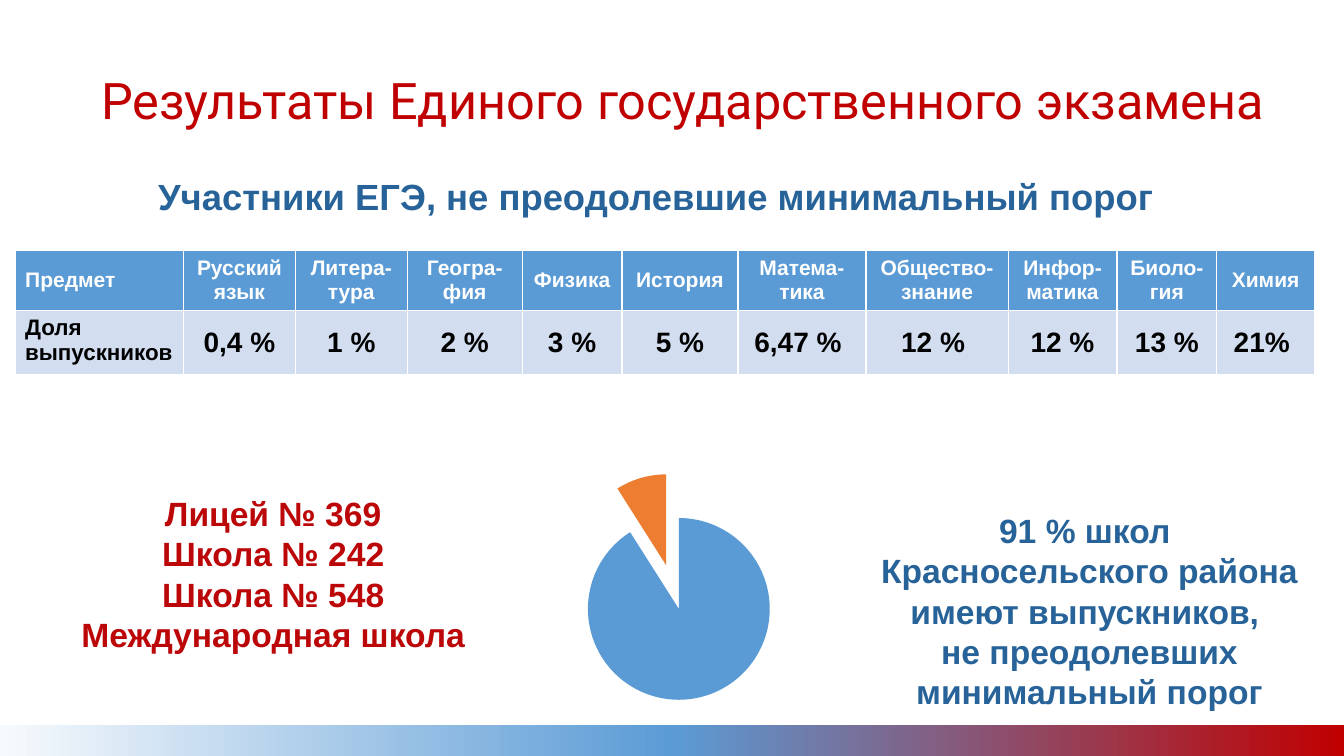
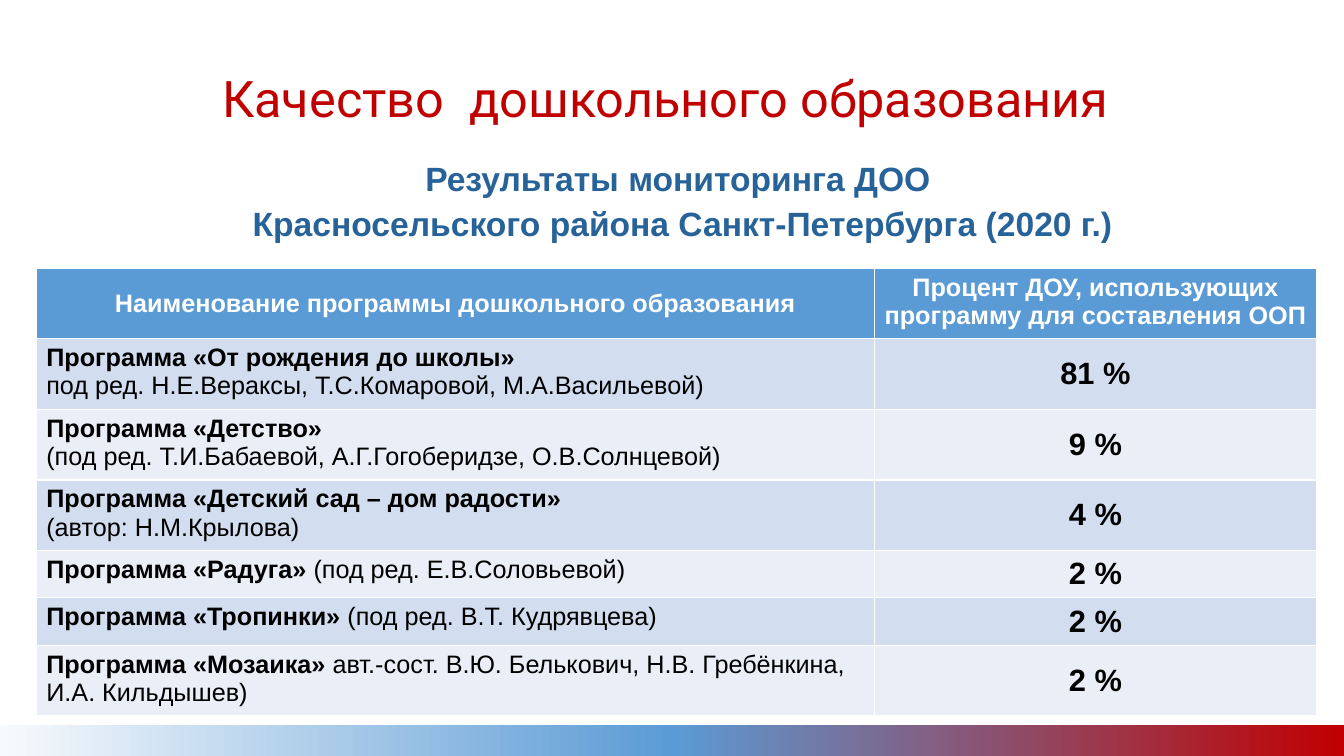
from copy import deepcopy
from dataclasses import dataclass, replace

from lxml import etree
from pptx import Presentation
from pptx.chart.data import CategoryChartData
from pptx.dml.color import RGBColor
from pptx.enum.chart import XL_CHART_TYPE as ChartType
from pptx.enum.shapes import MSO_SHAPE as Preset
from pptx.enum.text import MSO_ANCHOR as Anchor, MSO_AUTO_SIZE as AutoSize, PP_ALIGN as Align
from pptx.oxml.ns import qn
from pptx.util import Inches, Pt


@dataclass(frozen=True)
class TextStyle:
    size: int
    color: str
    font: str = "Arial"
    bold: bool = True


@dataclass(frozen=True)
class Theme:
    width: float = 13.33
    height: float = 7.5
    band_height: float = 0.31
    white: str = "FFFFFF"
    header: str = "5B9BD5"
    rows: tuple = ("D2DEEF", "EAEFF7")
    band: tuple = (("F7FAFD", 0), ("5B9BD5", 0.5), ("C00000", 1))
    slices: tuple = ("5B9BD5", "ED7D31")
    title: TextStyle = TextStyle(36, "C00000", "Roboto", False)
    subtitle: TextStyle = TextStyle(26, "276399")
    note: TextStyle = TextStyle(24, "276399")
    schools: TextStyle = TextStyle(24, "BC0709")
    head: TextStyle = TextStyle(18, "FFFFFF")
    small_head: TextStyle = TextStyle(15, "FFFFFF")
    cell: TextStyle = TextStyle(18, "000000")
    small_cell: TextStyle = TextStyle(16, "000000")
    share: TextStyle = TextStyle(20, "000000")
    percent: TextStyle = TextStyle(22, "000000")
    chart: TextStyle = TextStyle(10, "000000", "Calibri", False)


THEME = Theme()


def inches(box):
    return [Inches(value) for value in box]


def paint(fill, color):
    fill.solid()
    fill.fore_color.rgb = RGBColor.from_string(color)


def set_font(font, style):
    font.name = style.font
    font.size = Pt(style.size)
    font.bold = style.bold
    font.color.rgb = RGBColor.from_string(style.color)


def write(frame, lines, style, align=Align.CENTER, spacing=None):
    """Each line is a string, or a list of (text, bold) runs."""
    for index, line in enumerate(lines):
        paragraph = frame.add_paragraph() if index else frame.paragraphs[0]
        paragraph.alignment = align
        paragraph.line_spacing = spacing
        if isinstance(line, str):
            paragraph.text = line
            set_font(paragraph.font, style)
            continue
        set_font(paragraph.font, style)
        for text, bold in line:
            run = paragraph.add_run()
            run.text = text
            run.font.bold = bold


def add_block(shapes, box, lines, style, spacing=None):
    frame = shapes.add_textbox(*inches(box)).text_frame
    frame.word_wrap = True
    frame.auto_size = AutoSize.SHAPE_TO_FIT_TEXT
    write(frame, lines, style, spacing=spacing)


def add_rectangle(shapes, box):
    shape = shapes.add_shape(Preset.RECTANGLE, *inches(box))
    shape.shadow.inherit = False
    shape.line.fill.background()
    return shape


def add_title(shapes, box, text, spacing):
    shape = add_rectangle(shapes, box)
    paint(shape.fill, THEME.white)
    shape.text_frame.word_wrap = True
    shape.text_frame.vertical_anchor = Anchor.MIDDLE
    write(shape.text_frame, [text], THEME.title, spacing=spacing)


def add_band(shapes):
    top = THEME.height - THEME.band_height
    fill = add_rectangle(shapes, (0, top, THEME.width, THEME.band_height)).fill
    fill.gradient()
    fill.gradient_angle = 0
    # The default gradient has two stops, the band needs three
    stop_list = next(fill._xPr.iter(qn("a:gsLst")))
    stop_list.append(deepcopy(stop_list[-1]))
    for stop, (color, position) in zip(fill.gradient_stops, THEME.band):
        stop.color.rgb = RGBColor.from_string(color)
        stop.position = position


def start_slide(presentation, title, title_box, spacing):
    shapes = presentation.slides.add_slide(presentation.slide_layouts[6]).shapes
    add_title(shapes, title_box, title, spacing)
    add_band(shapes)
    return shapes


def add_grid(shapes, left, top, widths, heights):
    """Table with a header row and banded rows; the style draws white rules."""
    box = (left, top, sum(widths), sum(heights))
    table = shapes.add_table(len(heights), len(widths), *inches(box)).table
    for column, width in zip(table.columns, widths):
        column.width = Inches(width)
    for index, (row, height) in enumerate(zip(table.rows, heights)):
        row.height = Inches(height)
        for cell in row.cells:
            paint(cell.fill, THEME.rows[(index - 1) % 2] if index else THEME.header)
            cell.vertical_anchor = Anchor.MIDDLE
    return table


def add_subject_table(shapes, left, top):
    subjects = [
        ("Русский язык", "0,4 %", 1.11), ("Литера-тура", "1 %", 1.11),
        ("Геогра-фия", "2 %", 1.14), ("Физика", "3 %", 0.99),
        ("История", "5 %", 1.15), ("Матема-тика", "6,47 % ", 1.27),
        ("Общество-знание", "12 % ", 1.41), ("Инфор-матика", "12 %", 1.08),
        ("Биоло-гия", "13 %", 0.99), ("Химия", "21% ", 0.97),
    ]
    widths = [1.67] + [width for _, _, width in subjects]
    table = add_grid(shapes, left, top, widths, [0.6, 0.63])
    # Row labels
    write(table.cell(0, 0).text_frame, ["Предмет"], THEME.small_head, Align.LEFT)
    write(table.cell(1, 0).text_frame, ["Доля выпускников"], THEME.small_cell, Align.LEFT)
    table.cell(1, 0).vertical_anchor = Anchor.TOP
    # Subjects and shares
    for column, (subject, share, _) in enumerate(subjects, 1):
        write(table.cell(0, column).text_frame, [subject], THEME.small_head)
        write(table.cell(1, column).text_frame, [share], THEME.share)


def add_school_pie(shapes, box):
    data = CategoryChartData()
    data.categories = ["1", "2"]
    data.add_series("Series 1", (91, 9))
    chart = shapes.add_chart(ChartType.PIE, *inches(box), data).chart
    chart.has_title = False
    chart.has_legend = False
    set_font(chart.font, THEME.chart)
    series = chart.plots[0].series[0]
    for index, color in enumerate(THEME.slices):
        paint(series.points[index].format.fill, color)
    # Pull the slices apart
    explosion = etree.Element(qn("c:explosion"), val="25")
    series._element.find(qn("c:dPt")).addprevious(explosion)


def add_program_table(shapes, left, top):
    # Name, authors, share, authors on their own line
    programs = [
        ("Программа «От рождения до школы»",
         "под ред. Н.Е.Вераксы, Т.С.Комаровой, М.А.Васильевой)", "81 %", True),
        ("Программа «Детство»",
         "(под ред. Т.И.Бабаевой, А.Г.Гогоберидзе, О.В.Солнцевой)", "9 %", True),
        ("Программа «Детский сад – дом радости»", "(автор: Н.М.Крылова)", "4 %", True),
        ("Программа «Радуга» ", "(под ред. Е.В.Соловьевой)", "2 %", False),
        ("Программа «Тропинки» ", "(под ред. В.Т. Кудрявцева)", "2 %", False),
        ("Программа «Мозаика» ",
         "авт.-сост. В.Ю. Белькович, Н.В. Гребёнкина, И.А. Кильдышев)", "2 %", False),
    ]
    tall, low = 0.7, 0.47
    heights = [tall] * 4 + [low] * 2 + [tall]
    table = add_grid(shapes, left, top, [8.31, 4.39], heights)
    headings = ("Наименование программы дошкольного образования",
                "Процент ДОУ, использующих программу для составления ООП")
    for column, heading in enumerate(headings):
        write(table.cell(0, column).text_frame, [heading], THEME.head)
    table.cell(0, 1).vertical_anchor = Anchor.TOP
    for row, (name, authors, percent, own_line) in enumerate(programs, 1):
        runs = [(name, True), (authors, False)]
        lines = [[run] for run in runs] if own_line else [runs]
        cell = table.cell(row, 0)
        cell.vertical_anchor = Anchor.TOP
        write(cell.text_frame, lines, replace(THEME.cell, bold=False), Align.LEFT)
        write(table.cell(row, 1).text_frame, [percent], THEME.percent)


def build_exam_slide(presentation):
    shapes = start_slide(presentation, "Результаты Единого государственного экзамена",
                         (0.79, 0.25, 11.97, 1.36), 1.2)
    add_block(shapes, (0.27, 1.68, 12.48, 0.54),
              ["Участники ЕГЭ, не преодолевшие минимальный порог"], THEME.subtitle)
    add_subject_table(shapes, 0.15, 2.48)
    add_school_pie(shapes, (4.34, 4.56, 4.66, 2.53))
    add_block(shapes, (0.53, 4.84, 4.36, 1.72),
              ["Лицей № 369", "Школа № 242", "Школа № 548", "Международная школа"],
              THEME.schools)
    add_block(shapes, (8.33, 5.01, 4.95, 2.12),
              ["91 % школ ", "Красносельского района имеют выпускников, \v"
               "не преодолевших минимальный порог"], THEME.note)


def build_preschool_slide(presentation):
    shapes = start_slide(presentation, "Качество  дошкольного образования ",
                         (0.68, 0.39, 11.97, 1.09), 1.1)
    add_block(shapes, (0.42, 1.48, 12.7, 0.99),
              ["Результаты мониторинга ДОО \v"
               "Красносельского района Санкт-Петербурга (2020 г.)"], THEME.note, 1.1)
    add_program_table(shapes, 0.36, 2.66)


def main():
    presentation = Presentation()
    presentation.slide_width = Inches(THEME.width)
    presentation.slide_height = Inches(THEME.height)
    build_exam_slide(presentation)
    build_preschool_slide(presentation)
    presentation.save("out.pptx")


if __name__ == "__main__":
    main()
